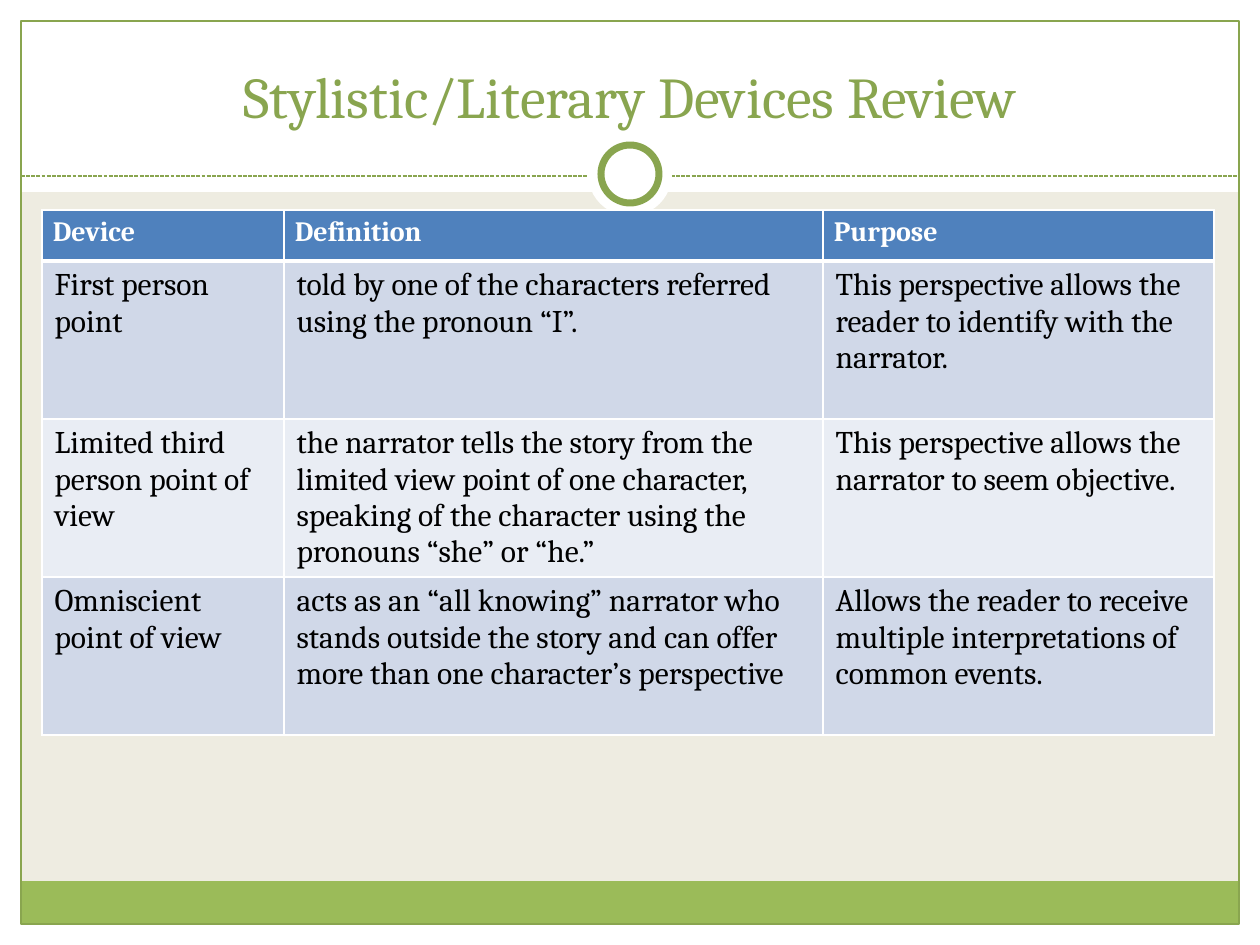
from lxml import etree
from pptx import Presentation
from pptx.dml.color import RGBColor
from pptx.enum.dml import MSO_LINE
from pptx.enum.shapes import MSO_CONNECTOR, MSO_SHAPE
from pptx.enum.text import MSO_ANCHOR, PP_ALIGN
from pptx.oxml.ns import qn
from pptx.util import Pt

RECT, OVAL = MSO_SHAPE.RECTANGLE, MSO_SHAPE.OVAL
STRAIGHT = MSO_CONNECTOR.STRAIGHT
DASH = MSO_LINE.SQUARE_DOT
BOTTOM, CENTER = MSO_ANCHOR.BOTTOM, PP_ALIGN.CENTER

EMU_PER_PX = 914400 / 126
SLIDE_W, SLIDE_H = 1260, 945
FONT = "Cambria"
COLORS = {
    "paper": "EEECE1", "white": "FFFFFF", "green": "9BBB59", "olive": "89A54F",
    "header": "4F81BD", "odd_row": "D0D8E8", "even_row": "E9EDF4", "text": "000000",
}
COLUMN_WIDTHS = [242, 539, 391]
HEADER_HEIGHT, ROW_HEIGHT = 51, 158
DEVICES = [
    ("Device", "Definition", "Purpose"),
    ("First person point",
     "told by one of the characters referred using the pronoun “I”.",
     "This perspective allows the reader to identify with the narrator."),
    ("Limited third person point of view",
     "the narrator tells the story from the limited view point of one character, "
     "speaking of the character using the pronouns “she” or “he.”",
     "This perspective allows the narrator to seem objective."),
    ("Omniscient point of view",
     "acts as an “all knowing” narrator who stands outside the story and can offer "
     "more than one character’s perspective",
     "Allows the reader to receive multiple interpretations of common events."),
]


def px(length):
    return round(length * EMU_PER_PX)


def color(name):
    return RGBColor.from_string(COLORS[name])


def set_font(font, size, name, bold=False):
    font.name, font.size, font.bold = FONT, Pt(size), bold
    font.color.rgb = color(name)


def add_panel(slide, kind, box, fill=None, line=None, line_width=0.75):
    panel = slide.shapes.add_shape(kind, *map(px, box))
    panel.shadow.inherit = False
    if fill:
        panel.fill.solid()
        panel.fill.fore_color.rgb = color(fill)
    else:
        panel.fill.background()
    if line:
        panel.line.color.rgb = color(line)
        panel.line.width = Pt(line_width)
    else:
        panel.line.fill.background()


def add_frame(slide, width, height, margin=21, band=192, bar=43):
    # White margins and title band
    for box in [
        (0, height - margin, width, margin),
        (0, 0, width, band),
        (0, 0, margin, height),
        (width - margin, 0, margin, height),
    ]:
        add_panel(slide, RECT, box, "white")

    # Footer bar and outline
    inner_w, inner_h = width - 2 * margin, height - 2 * margin
    add_panel(slide, RECT, (margin, height - margin - bar, inner_w, bar), "green")
    add_panel(slide, RECT, (margin, margin, inner_w, inner_h), line="olive")

    # Dashed divider
    divider_y = band - 16
    divider = slide.shapes.add_connector(
        STRAIGHT, px(margin), px(divider_y), px(width - margin), px(divider_y))
    divider.line.color.rgb = color("olive")
    divider.line.width = Pt(0.75)
    divider.line.dash_style = DASH
    etree.SubElement(divider._element.spPr, qn("a:effectLst"))

    # Ring on the divider
    ring_y = divider_y - 2
    for size, line in [(84, None), (58, "olive")]:
        box = ((width - size) // 2, ring_y - size // 2, size, size)
        add_panel(slide, OVAL, box, "white", line, 4)


def add_title(slide, left, top, width, height):
    title = slide.shapes.title
    title.left, title.top, title.width, title.height = map(px, (left, top, width, height))
    title.text_frame.text = "Stylistic/Literary Devices Review"
    title.text_frame.vertical_anchor = BOTTOM
    heading = title.text_frame.paragraphs[0]
    heading.alignment = CENTER
    set_font(heading.font, 33, "olive")
    # Bring the title in front of the white band
    slide.shapes._spTree.append(title._element)


def set_borders(cell, bottom_width):
    properties = cell._tc.get_or_add_tcPr()
    for side, width in [("L", 1), ("R", 1), ("T", 1), ("B", bottom_width)]:
        border = etree.SubElement(properties, qn(f"a:ln{side}"), w=str(Pt(width)))
        fill = etree.SubElement(border, qn("a:solidFill"))
        etree.SubElement(fill, qn("a:srgbClr"), val=COLORS["white"])


def add_devices_table(slide, left, top):
    heights = [HEADER_HEIGHT] + [ROW_HEIGHT] * (len(DEVICES) - 1)
    table = slide.shapes.add_table(
        len(DEVICES), len(COLUMN_WIDTHS), px(left), px(top),
        px(sum(COLUMN_WIDTHS)), px(sum(heights))).table
    for column, width in zip(table.columns, COLUMN_WIDTHS):
        column.width = px(width)
    for r, (device, height) in enumerate(zip(DEVICES, heights)):
        table.rows[r].height = px(height)
        is_header = r == 0
        row_fill = "header" if is_header else "odd_row" if r % 2 else "even_row"
        for c, wording in enumerate(device):
            cell = table.cell(r, c)
            cell.text = wording
            font = cell.text_frame.paragraphs[0].font
            if is_header:
                cell.margin_left = cell.margin_right = px(11)
                cell.margin_top = cell.margin_bottom = px(6)
                set_font(font, 16, "white", bold=True)
            else:
                set_font(font, 18, "text")
            # The header rule is shared with the first body row
            set_borders(cell, 3 if is_header else 1)
            if r == 1:
                cell._tc.tcPr.find(qn("a:lnT")).set("w", str(Pt(3)))
            cell.fill.solid()
            cell.fill.fore_color.rgb = color(row_fill)


def main():
    deck = Presentation()
    deck.slide_width, deck.slide_height = px(SLIDE_W), px(SLIDE_H)
    slide = deck.slides.add_slide(deck.slide_layouts[5])
    slide.background.fill.solid()
    slide.background.fill.fore_color.rgb = color("paper")
    add_frame(slide, SLIDE_W, SLIDE_H)
    add_title(slide, 42, 32, 1176, 104)
    add_devices_table(slide, 42, 210)
    deck.save("out.pptx")


if __name__ == "__main__":
    main()
